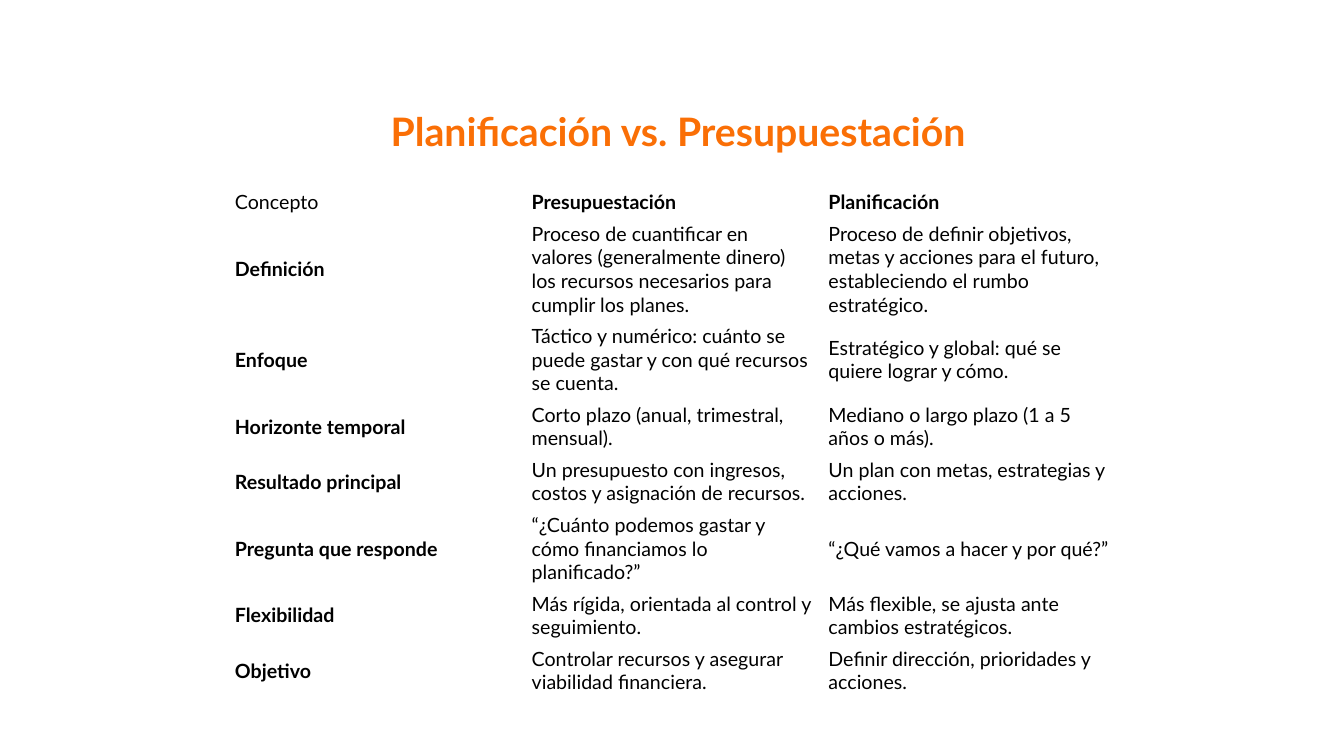
"""Build a slide with a table comparing planning and budgeting."""
from pptx import Presentation
from pptx.dml.color import RGBColor
from pptx.enum.text import MSO_ANCHOR, MSO_AUTO_SIZE, PP_ALIGN
from pptx.util import Inches, Pt

MIDDLE = MSO_ANCHOR.MIDDLE
GROW = MSO_AUTO_SIZE.SHAPE_TO_FIT_TEXT
CENTER = PP_ALIGN.CENTER

TITLE = "Planificación vs. Presupuestación"
ROWS = [
    ("Concepto", "Presupuestación", "Planificación"),
    ("Definición",
     "Proceso de cuantificar en valores (generalmente dinero) los recursos necesarios para cumplir los planes.",
     "Proceso de definir objetivos, metas y acciones para el futuro, estableciendo el rumbo estratégico."),
    ("Enfoque",
     "Táctico y numérico: cuánto se puede gastar y con qué recursos se cuenta.",
     "Estratégico y global: qué se quiere lograr y cómo."),
    ("Horizonte temporal",
     "Corto plazo (anual, trimestral, mensual).",
     "Mediano o largo plazo (1 a 5 años o más)."),
    ("Resultado principal",
     "Un presupuesto con ingresos, costos y asignación de recursos.",
     "Un plan con metas, estrategias y acciones."),
    ("Pregunta que responde",
     "“¿Cuánto podemos gastar y cómo financiamos lo planificado?”",
     "“¿Qué vamos a hacer y por qué?”"),
    ("Flexibilidad",
     "Más rígida, orientada al control y seguimiento.",
     "Más flexible, se ajusta ante cambios estratégicos."),
    ("Objetivo",
     "Controlar recursos y asegurar viabilidad financiera.",
     "Definir dirección, prioridades y acciones."),
]
LINES = (1, 4, 3, 2, 2, 3, 2, 2)
COLORS = {"title": "FA6F06", "text": "000000"}
LINE_H, PAD = 0.23, 0.08
CELL = {
    "vertical_anchor": MIDDLE,
    "margin_left": Inches(0.08),
    "margin_right": Inches(0.08),
    "margin_top": Inches(0.04),
    "margin_bottom": Inches(0.04),
}


def apply(item, values):
    for name, value in values.items():
        setattr(item, name, value)


def style(para, size, color, bold):
    apply(para.runs[0].font, {"name": "Lato", "size": Pt(size), "bold": bold})
    para.runs[0].font.color.rgb = RGBColor.from_string(COLORS[color])


def add_title(slide):
    box = slide.shapes.add_textbox(Inches(2.3), Inches(1.02), Inches(8.85), Inches(0.57))
    frame = box.text_frame
    apply(frame, {"text": TITLE, "word_wrap": True, "auto_size": GROW})
    para = frame.paragraphs[0]
    para.alignment = CENTER
    style(para, 28, "title", True)


def add_grid(slide):
    heights = [Inches(PAD + LINE_H * count) for count in LINES]
    grid = slide.shapes.add_table(
        len(ROWS), len(ROWS[0]), Inches(2.25), Inches(1.85), Inches(8.83), sum(heights)
    ).table
    apply(grid, {"first_row": False, "horz_banding": False})
    for r, texts in enumerate(ROWS):
        grid.rows[r].height = heights[r]
        for c, text in enumerate(texts):
            cell = grid.cell(r, c)
            apply(cell, {"text": text, **CELL})
            cell.fill.background()
            style(cell.text_frame.paragraphs[0], 14, "text", (r == 0) != (c == 0))


def main():
    deck = Presentation()
    apply(deck, {"slide_width": Inches(13.33), "slide_height": Inches(7.5)})
    slide = deck.slides.add_slide(deck.slide_layouts[6])
    add_grid(slide)
    add_title(slide)
    deck.save("out.pptx")


if __name__ == "__main__":
    main()
